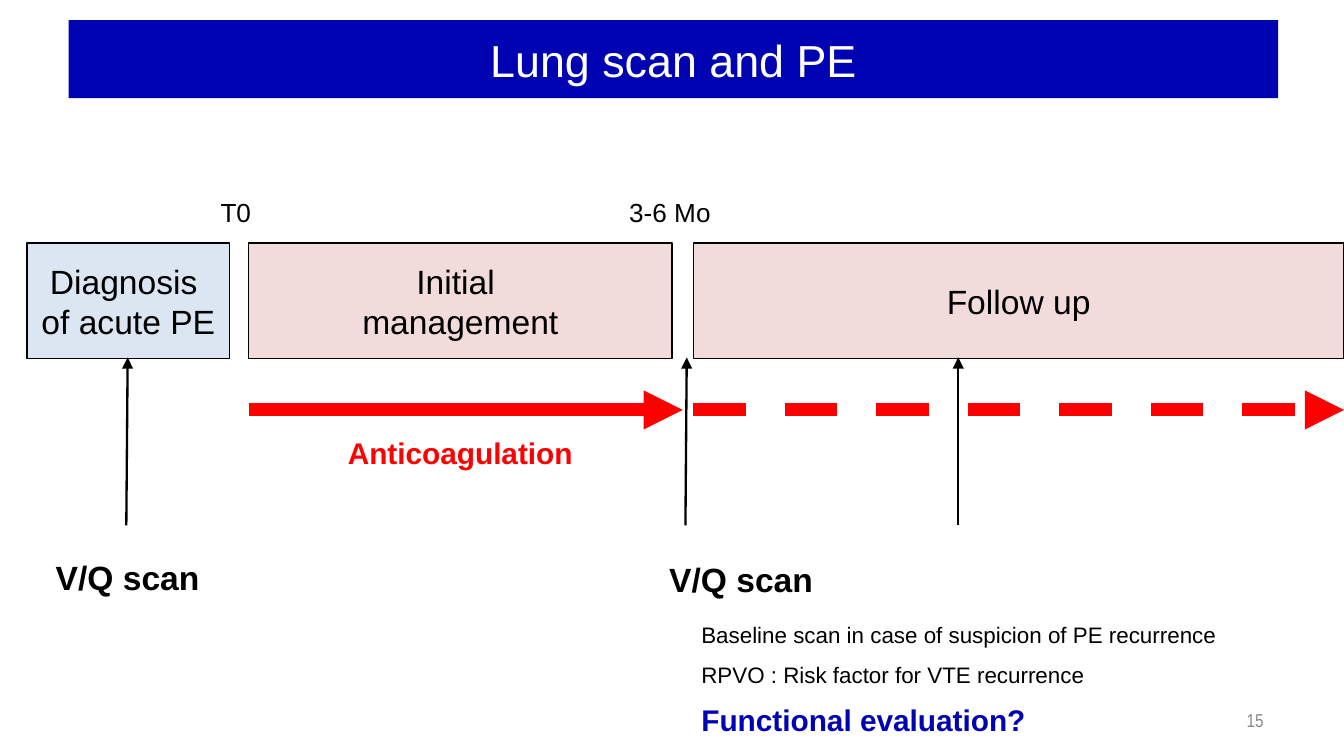
import lxml.etree
import pptx
import pptx.dml.color
import pptx.enum.dml
import pptx.enum.shapes
import pptx.enum.text
import pptx.oxml.ns
import pptx.util

Inches = pptx.util.Inches
Align = pptx.enum.text.PP_ALIGN
Anchor = pptx.enum.text.MSO_ANCHOR
AutoSize = pptx.enum.text.MSO_AUTO_SIZE

THEME = {
    "font": "Arial", "number_font": "Arial Narrow",
    "navy": "0003B1", "white": "FFFFFF", "black": "000000", "gray": "898989",
    "red": "FF0000", "blue_box": "DCE6F2", "pink_box": "F2DCDB",
    "title": 24, "stage": 18, "strong": 16, "time": 14, "note": 12, "number": 10,
    "box_line": 0.75, "scan_line": 1.25, "treatment_line": 7,
}


def write_text(shape, text, size, color="black", bold=False, align=Align.CENTER,
               anchor=Anchor.MIDDLE, wrap=True, grow=False, spacing=None,
               font="font", inset=0.05):
    frame = shape.text_frame
    frame.text = text
    frame.word_wrap = wrap
    frame.auto_size = AutoSize.SHAPE_TO_FIT_TEXT if grow else AutoSize.NONE
    frame.vertical_anchor = anchor
    frame.margin_top = frame.margin_bottom = Inches(inset)
    for paragraph in frame.paragraphs:
        paragraph.alignment = align
        if spacing:
            paragraph.line_spacing = spacing
        for run in paragraph.runs:
            run.font.name = THEME[font]
            run.font.size = pptx.util.Pt(THEME[size])
            run.font.bold = bold
            run.font.color.rgb = pptx.dml.color.RGBColor.from_string(THEME[color])


def draw_arrow(start, end, color, width, dash=None):
    arrow = slide.shapes.add_connector(
        pptx.enum.shapes.MSO_CONNECTOR.STRAIGHT, *map(Inches, start + end))
    arrow.line.color.rgb = pptx.dml.color.RGBColor.from_string(THEME[color])
    arrow.line.width = pptx.util.Pt(THEME[width])
    if dash:
        arrow.line.dash_style = dash
    line = arrow.line._get_or_add_ln()
    lxml.etree.SubElement(line, pptx.oxml.ns.qn("a:tailEnd"), type="triangle")
    lxml.etree.SubElement(arrow._element.spPr, pptx.oxml.ns.qn("a:effectLst"))


presentation = pptx.Presentation()
presentation.slide_width = Inches(10)
presentation.slide_height = Inches(10 * 9 / 16)
slide = presentation.slides.add_slide(presentation.slide_layouts[5])

title = slide.shapes.title
title.left, title.top, title.width, title.height = map(Inches, (0.51, 0.15, 9, 0.58))
title.fill.solid()
title.fill.fore_color.rgb = pptx.dml.color.RGBColor.from_string(THEME["navy"])
write_text(title, "Lung scan and PE", "title", "white")

stages = [
    ("Diagnosis \nof acute PE", 0.2, 1.51, "blue_box", False),
    ("Initial \nmanagement", 1.85, 3.15, "pink_box", True),
    ("Follow up", 5.16, 4.84, "pink_box", True),
]
for text, left, width, fill, wrap in stages:
    stage = slide.shapes.add_shape(
        pptx.enum.shapes.MSO_SHAPE.RECTANGLE, *map(Inches, (left, 1.81, width, 0.86)))
    stage.shadow.inherit = False
    stage.fill.solid()
    stage.fill.fore_color.rgb = pptx.dml.color.RGBColor.from_string(THEME[fill])
    stage.line.color.rgb = pptx.dml.color.RGBColor.from_string(THEME["black"])
    stage.line.width = pptx.util.Pt(THEME["box_line"])
    write_text(stage, text, "stage", wrap=wrap)

draw_arrow((1.85, 3.05), (5.08, 3.05), "red", "treatment_line")
draw_arrow((5.16, 3.05), (10, 3.05), "red", "treatment_line",
           pptx.enum.dml.MSO_LINE.DASH)
for bottom_x, top_x in [(0.94, 0.95), (5.1, 5.11), (7.13, 7.13)]:
    draw_arrow((bottom_x, 3.91), (top_x, 2.66), "black", "scan_line")

time_label = {"size": "time", "anchor": Anchor.TOP, "wrap": False, "grow": True}
scan_label = {"size": "stage", "bold": True, "spacing": 1.5, "inset": 0.04}
note = {"align": Align.LEFT, "anchor": Anchor.TOP, "wrap": False, "grow": True}
labels = [
    ("T0", (1.54, 1.41, 0.43, 0.34), time_label),
    ("3-6 Mo", (4.58, 1.41, 0.81, 0.34), time_label),
    ("V/Q scan", (0.28, 3.91, 1.34, 0.62), scan_label),
    ("V/Q scan", (4.53, 3.92, 1.97, 0.62), scan_label),
    ("Anticoagulation", (2.48, 3.05, 1.89, 0.45),
     {"size": "strong", "color": "red", "bold": True, "anchor": Anchor.TOP,
      "grow": True, "spacing": 1.5}),
    ("Baseline scan in case of suspicion of PE recurrence\n"
     "RPVO : Risk factor for VTE recurrence", (5.12, 4.47, 4.06, 0.67),
     {**note, "size": "note", "spacing": 1.5}),
    ("Functional evaluation?", (5.12, 5.17, 2.65, 0.37),
     {**note, "size": "strong", "color": "navy", "bold": True}),
    ("15", (8.94, 5.21, 0.56, 0.3),
     {"size": "number", "color": "gray", "align": Align.RIGHT, "font": "number_font"}),
]
for text, place, style in labels:
    label = slide.shapes.add_textbox(*map(Inches, place))
    write_text(label, text, **style)

presentation.save("out.pptx")
